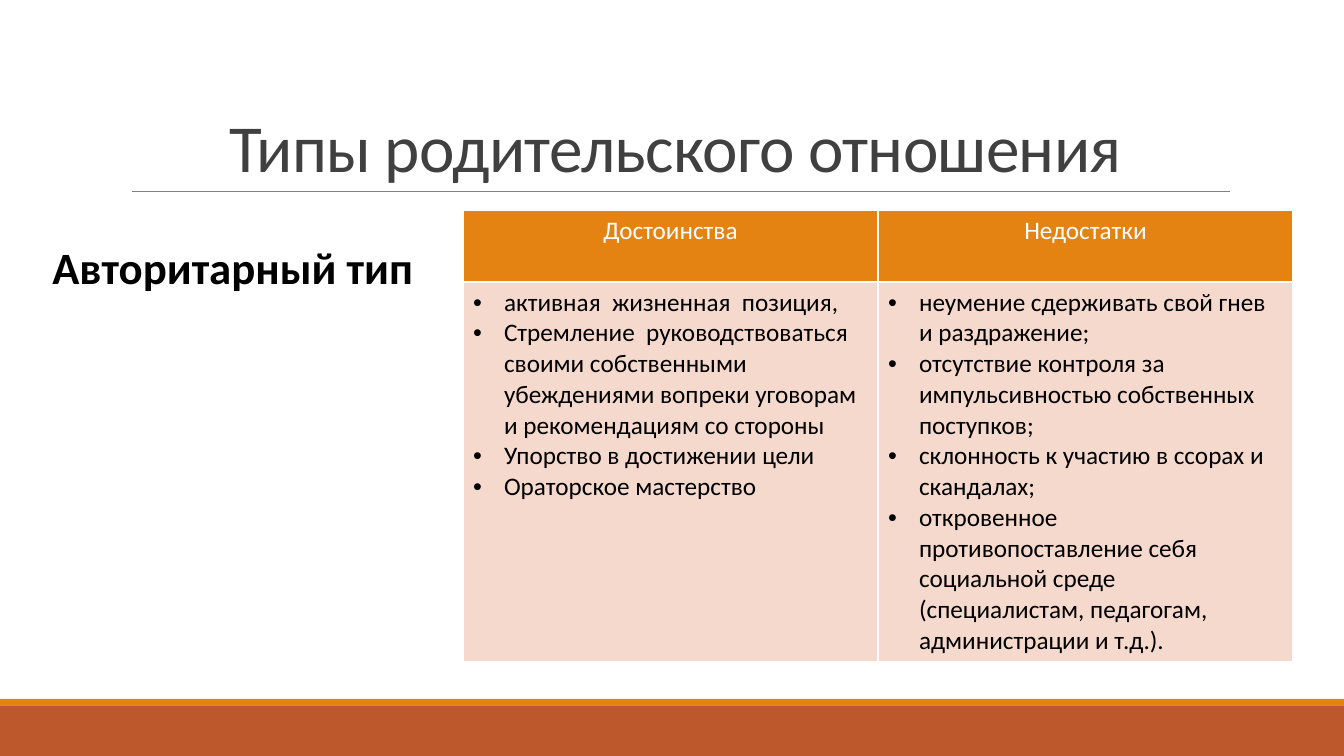
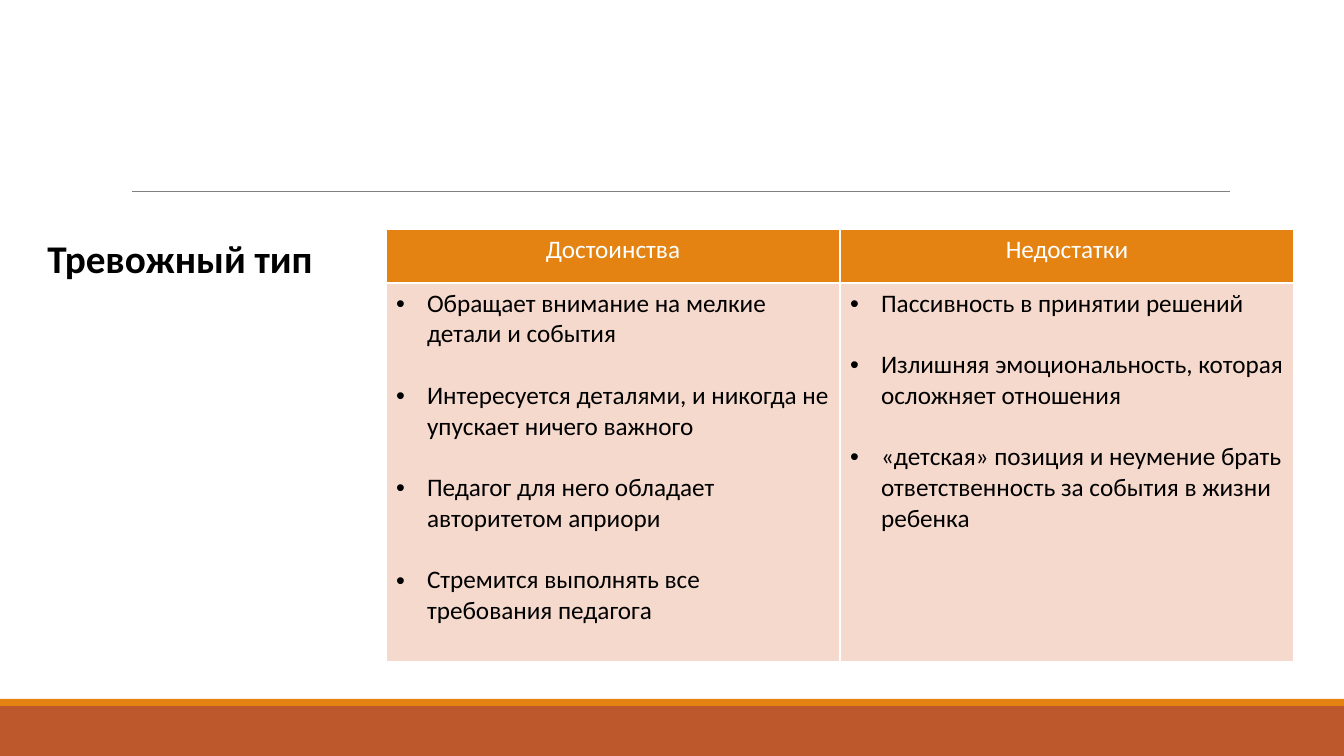
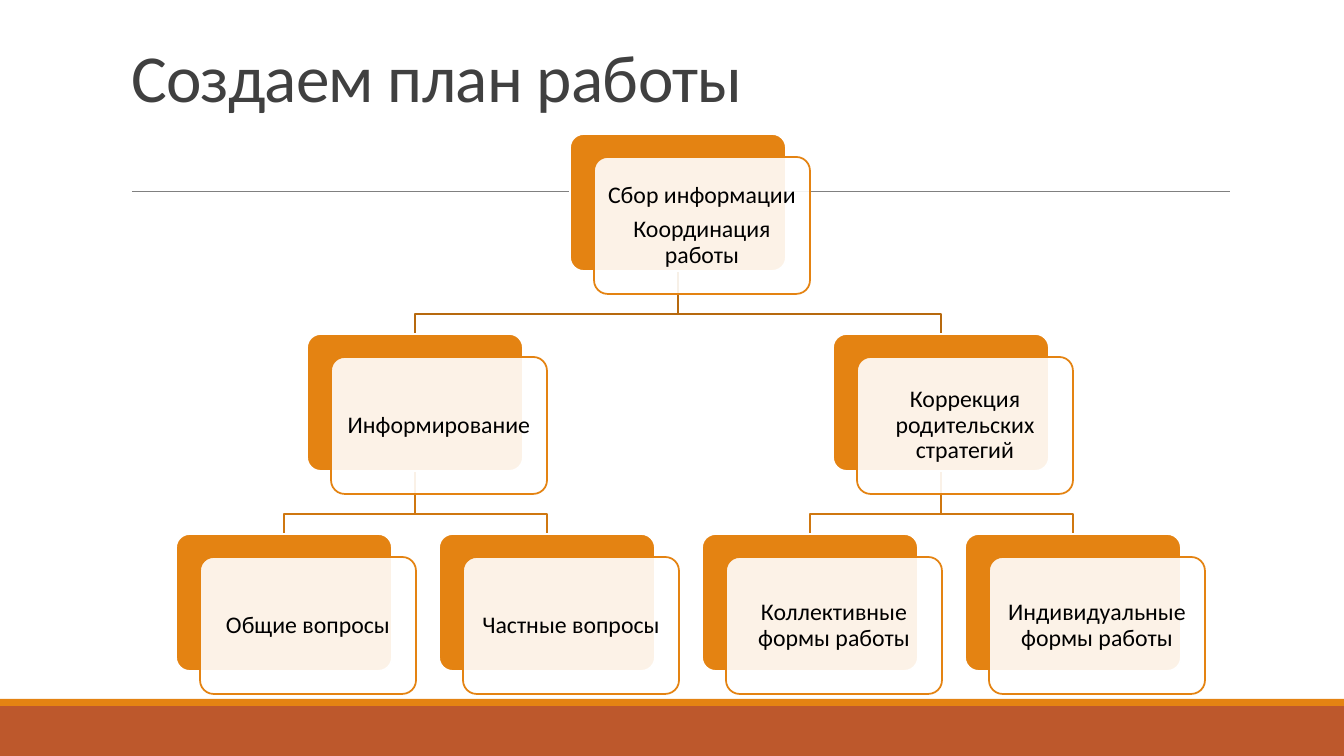
import pptx
import pptx.util
import pptx.dml.color
import pptx.enum.shapes
import pptx.enum.text
import pptx.oxml
import pptx.oxml.ns

WIDTH, HEIGHT = 1344, 756
SCALE = 12192000 / WIDTH
FONT = "Calibri"
ORANGE, RUST, PEACH = "E48312", "BD582C", "F5D9CC"
WHITE, BLACK, GREY, DARK = "FFFFFF", "000000", "808080", "404040"
TRUNK, BRANCH = "B7690E", "CF7710"
BULLET_INDENT = 31
CARD_WIDTH, CARD_HEIGHT = 216, 137
CARD_SHIFT_X, CARD_SHIFT_Y = 24, 23
LEAF_PITCH, LEVEL_PITCH = 263, 200

Shapes = pptx.enum.shapes.MSO_SHAPE
Align = pptx.enum.text.PP_ALIGN
Anchor = pptx.enum.text.MSO_ANCHOR

HEADINGS = ["Достоинства", "Недостатки"]
AUTHORITARIAN = [
    [
        "активная  жизненная  позиция,",
        "Стремление  руководствоваться своими собственными убеждениями "
        "вопреки уговорам и рекомендациям со стороны",
        "Упорство в достижении цели",
        "Ораторское мастерство",
    ],
    [
        "неумение сдерживать свой гнев и раздражение;",
        "отсутствие контроля за импульсивностью собственных поступков;",
        "склонность к участию в ссорах и скандалах;",
        "откровенное противопоставление себя социальной среде "
        "(специалистам, педагогам, администрации и т.д.).",
    ],
]
ANXIOUS = [
    [
        "Обращает внимание на мелкие детали и события",
        "Интересуется деталями, и никогда не упускает ничего важного",
        "Педагог для него обладает авторитетом априори",
        "Стремится выполнять все требования педагога",
    ],
    [
        "Пассивность в принятии решений",
        "Излишняя эмоциональность, которая осложняет отношения",
        "«детская» позиция и неумение брать ответственность "
        "за события в жизни ребенка",
    ],
]
PLAN_ROOT = ["Сбор информации", "Координация работы"]
PLAN_BRANCHES = [
    ("Информирование", ["Общие вопросы", "Частные вопросы"]),
    ("Коррекция родительских стратегий",
     ["Коллективные формы работы", "Индивидуальные формы работы"]),
]


def px(length):
    """Turn px into EMU."""
    return pptx.util.Emu(round(length * SCALE))


def box(left, top, width, height):
    """Turn a box in px into EMU lengths."""
    return [px(length) for length in (left, top, width, height)]


def colour(value):
    """Turn a hex string into a colour."""
    return pptx.dml.color.RGBColor.from_string(value)


def element(parent, tag, **attributes):
    """Append a drawing element to a parent."""
    child = parent.makeelement(pptx.oxml.ns.qn(tag), attributes)
    parent.append(child)
    return child


def paint(target, fill):
    """Give a shape or cell a solid fill."""
    target.fill.solid()
    target.fill.fore_color.rgb = colour(fill)


def outline(shape, line, width):
    """Give a shape or connector a solid line."""
    shape.line.color.rgb = colour(line)
    shape.line.width = pptx.util.Pt(width)


def write(frame, items, size, ink, align=Align.CENTER, bold=False,
          gap=0, spacing=None, bullets=False, tracking=None):
    """Fill a text frame with one paragraph per item."""
    frame.word_wrap = True
    for index, item in enumerate(items):
        para = frame.add_paragraph() if index else frame.paragraphs[0]
        para.text = item
        para.alignment = align
        if index and gap:
            para.space_before = pptx.util.Pt(gap)
        if spacing:
            para.line_spacing = spacing
        if bullets:
            properties = para._p.get_or_add_pPr()
            properties.set("marL", str(px(BULLET_INDENT)))
            properties.set("indent", str(-px(BULLET_INDENT)))
            element(properties, "a:buFont", typeface="Arial")
            element(properties, "a:buChar", char="•")
        font = para.font
        font.name, font.bold = FONT, bold
        font.size = pptx.util.Pt(size)
        font.color.rgb = colour(ink)
        if tracking:
            font._rPr.set("spc", str(tracking))


def add_block(page, kind, bounds, fill):
    """Add a filled shape without line or shadow."""
    block = page.shapes.add_shape(kind, *box(*bounds))
    block.shadow.inherit = False
    paint(block, fill)
    block.line.fill.background()
    return block


def add_page(deck, title=None, align=Align.LEFT, lift=0):
    """Add a slide with the shared bands, divider and title."""
    page = deck.slides.add_slide(deck.slide_layouts[5 if title else 6])
    add_block(page, Shapes.RECTANGLE, (0, 706, WIDTH, 50), RUST)
    add_block(page, Shapes.RECTANGLE, (0, 699, WIDTH, 7), ORANGE)
    divider = page.shapes.add_connector(
        pptx.enum.shapes.MSO_CONNECTOR.STRAIGHT,
        px(132), px(191), px(1230), px(191))
    outline(divider, GREY, 0.5)
    element(divider._element.spPr, "a:effectLst")
    if title:
        heading = page.shapes.title
        heading.left, heading.top, heading.width, heading.height = box(
            121, 31, 1109, 160)
        frame = heading.text_frame
        frame.auto_size = pptx.enum.text.MSO_AUTO_SIZE.NONE
        frame.vertical_anchor = Anchor.BOTTOM
        frame.margin_bottom = px(5 + lift)
        write(frame, [title], 48, DARK, align, spacing=0.85, tracking=-50)
    return page


def add_label(page, bounds, text, size):
    """Add the bold name of a parenting type."""
    label = page.shapes.add_textbox(*box(*bounds))
    write(label.text_frame, [text], size, BLACK, bold=True)


def style_cell(cell, fill):
    """Give a cell white borders and a fill."""
    properties = cell._tc.get_or_add_tcPr()
    for side in "LRTB":
        border = element(properties, f"a:ln{side}", w="12700")
        element(element(border, "a:solidFill"), "a:srgbClr", val=WHITE)
    paint(cell, fill)


def add_comparison(page, left, top, column_width, row_heights, columns, gap=0):
    """Add the table of strengths and weaknesses."""
    table = page.shapes.add_table(2, 2, *box(
        left, top, 2 * column_width, sum(row_heights))).table
    table.horz_banding = False
    for row, height in zip(table.rows, row_heights):
        row.height = px(height)
    for index, (heading, items) in enumerate(zip(HEADINGS, columns)):
        table.columns[index].width = px(column_width)
        header, body = table.cell(0, index), table.cell(1, index)
        style_cell(header, ORANGE)
        style_cell(body, PEACH)
        write(header.text_frame, [heading], 18, WHITE)
        write(body.text_frame, items, 18, BLACK, Align.LEFT,
              gap=gap, bullets=True)


def add_link(page, parent, child, line):
    """Draw a stepped line from a parent card to a child card."""
    start_x, end_x = (left + CARD_WIDTH // 2 for left in (parent[0], child[0]))
    start_y, end_y = parent[1] + CARD_HEIGHT, child[1]
    bend_y = end_y - 20
    builder = page.shapes.build_freeform(start_x, start_y, SCALE)
    builder.add_line_segments(
        [(start_x, bend_y), (end_x, bend_y), (end_x, end_y)], close=False)
    link = builder.convert_to_shape()
    link.shadow.inherit = False
    link.fill.background()
    outline(link, line, 1.25)


def add_card(page, place, items):
    """Add a solid card with a translucent text card over it."""
    left, top = place
    back = add_block(page, Shapes.ROUNDED_RECTANGLE,
                     (left, top, CARD_WIDTH, CARD_HEIGHT), ORANGE)
    front = add_block(page, Shapes.ROUNDED_RECTANGLE,
                      (left + CARD_SHIFT_X, top + CARD_SHIFT_Y,
                       CARD_WIDTH, CARD_HEIGHT), WHITE)
    for card, line in ((back, WHITE), (front, ORANGE)):
        card.adjustments[0] = 0.1
        outline(card, line, 1.25)
    tint = front._element.spPr.find(".//" + pptx.oxml.ns.qn("a:srgbClr"))
    element(tint, "a:alpha", val="90000")
    frame = front.text_frame
    frame.margin_left = frame.margin_right = px(7)
    frame.margin_top = frame.margin_bottom = px(7)
    frame.vertical_anchor = Anchor.MIDDLE
    write(frame, items, 17, BLACK, gap=6, spacing=0.9)


def add_plan(page, left, top):
    """Add the three-level plan, each parent centred over its children."""
    cards, links, parents = [], [], []
    leaf_x = left
    for name, leaves in PLAN_BRANCHES:
        places = [(leaf_x + LEAF_PITCH * index, top + 2 * LEVEL_PITCH)
                  for index in range(len(leaves))]
        leaf_x += LEAF_PITCH * len(leaves)
        parent = ((places[0][0] + places[-1][0]) // 2, top + LEVEL_PITCH)
        parents.append(parent)
        cards.append((parent, [name]))
        cards += [(place, [leaf]) for place, leaf in zip(places, leaves)]
        links += [(parent, place, BRANCH) for place in places]
    root = ((parents[0][0] + parents[-1][0]) // 2, top)
    links += [(root, parent, TRUNK) for parent in parents]
    for link in links:
        add_link(page, *link)
    for place, items in [(root, PLAN_ROOT)] + cards:
        add_card(page, place, items)


def main():
    """Build and save the deck."""
    deck = pptx.Presentation()
    deck.slide_width, deck.slide_height = px(WIDTH), px(HEIGHT)

    page = add_page(deck, "Типы родительского отношения", Align.CENTER)
    add_comparison(page, 463, 210, 415, (72, 379), AUTHORITARIAN)
    add_label(page, (0, 235, 466, 65), "Авторитарный тип", 32)

    page = add_page(deck)
    add_comparison(page, 386, 229, 454, (54, 379), ANXIOUS, gap=22)
    add_label(page, (0, 229, 360, 57), "Тревожный тип", 28)

    page = add_page(deck, "Создаем план работы", lift=70)
    add_plan(page, 176, 134)

    deck.save("out.pptx")


if __name__ == "__main__":
    main()
